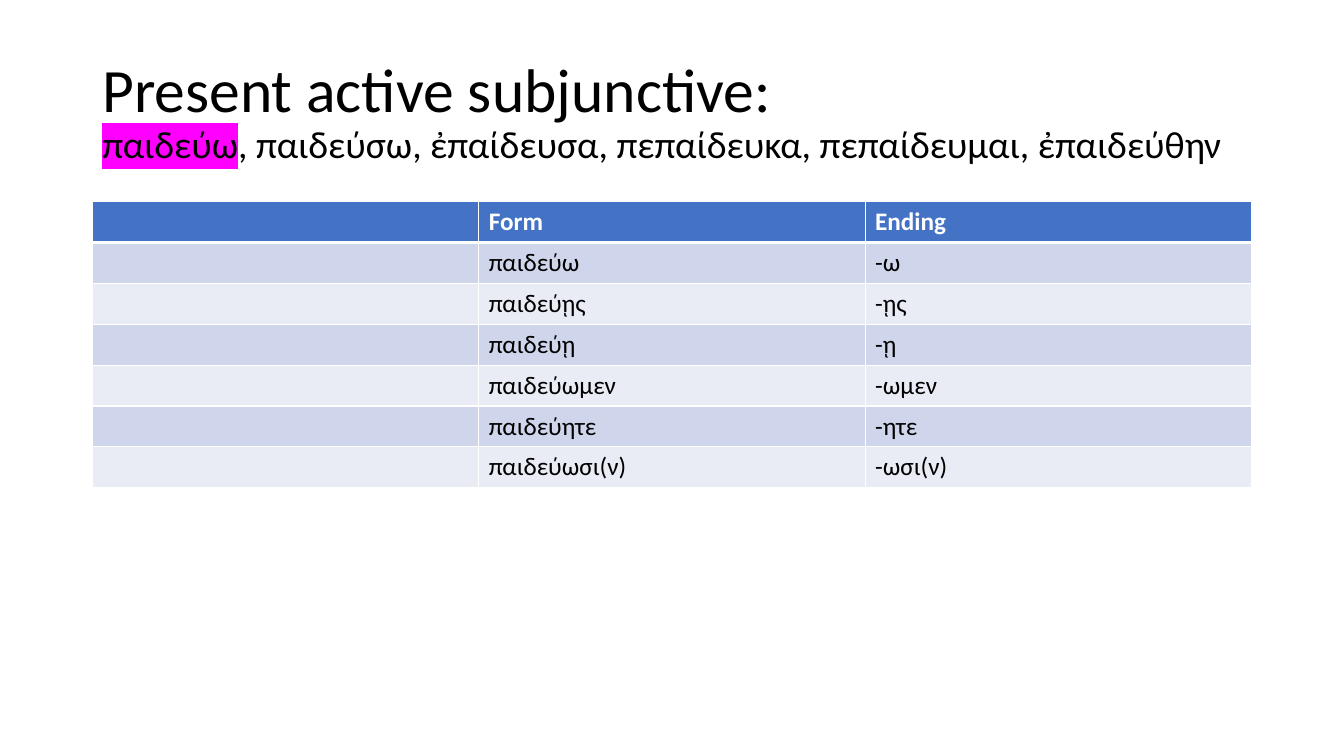
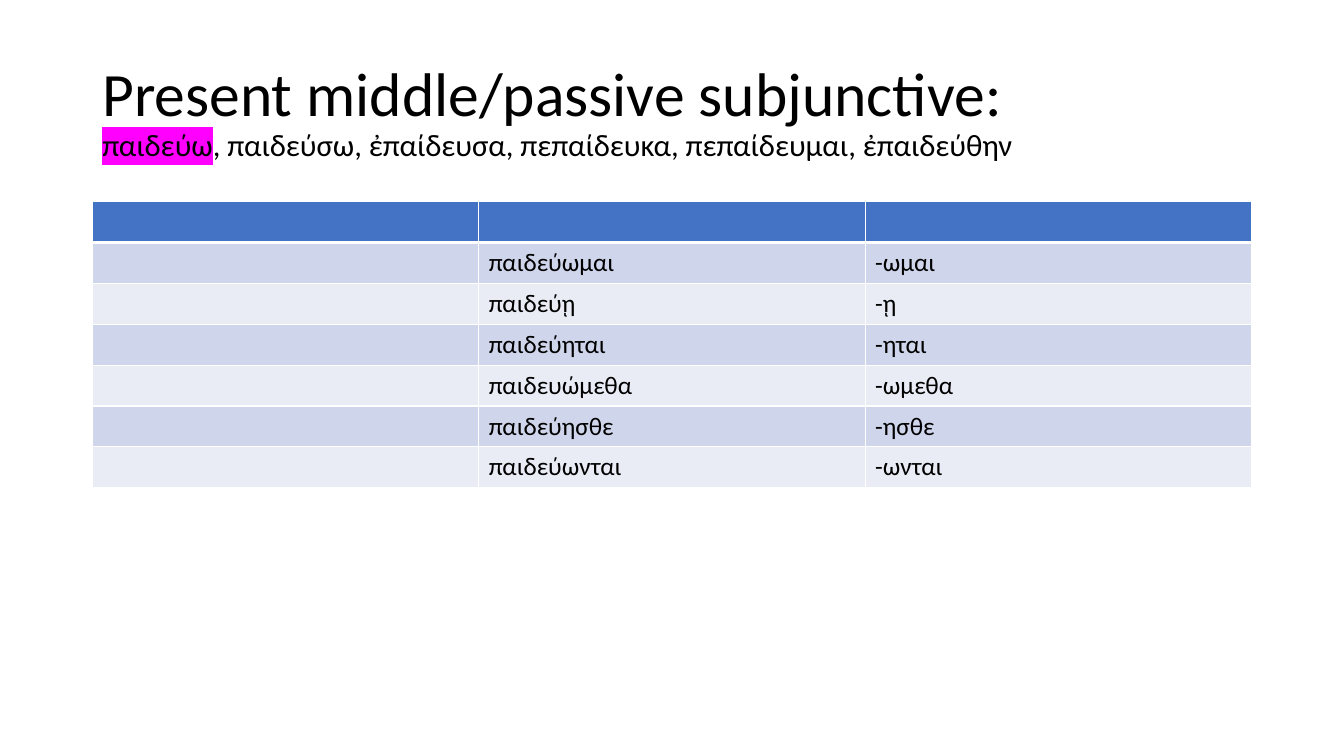
"""Build two slides of Greek present subjunctive forms."""
from dataclasses import dataclass

from lxml import etree
from pptx import Presentation
from pptx.dml.color import RGBColor
from pptx.enum.text import MSO_ANCHOR
from pptx.oxml.ns import qn
from pptx.util import Pt

MIDDLE = MSO_ANCHOR.MIDDLE


@dataclass(frozen=True)
class Theme:
    font: str = "Calibri"
    ink: str = "000000"
    white: str = "FFFFFF"
    head: str = "4472C4"
    bands: tuple = ("E9EBF5", "CFD5EA")
    mark: str = "FF00FF"
    title: int = 44
    body: int = 18
    thin: int = 1
    thick: int = 3


THEME = Theme()
LEFT, WIDTH = 66, 828
TOP, ROW = 144, 29.2
VERB = "παιδεύω"
PARTS = ", παιδεύσω, ἐπαίδευσα, πεπαίδευκα, πεπαίδευμαι, ἐπαιδεύθην"
SLIDES = [
    ("Present active subjunctive:", 27, [
        ("", "Form", "Ending"),
        ("", "παιδεύω", "-ω"),
        ("", "παιδεύῃς", "-ῃς"),
        ("", "παιδεύῃ", "-ῃ"),
        ("", "παιδεύωμεν", "-ωμεν"),
        ("", "παιδεύητε", "-ητε"),
        ("", "παιδεύωσι(ν)", "-ωσι(ν)"),
    ]),
    ("Present middle/passive subjunctive:", 22, [
        ("", "", ""),
        ("", "παιδεύωμαι", "-ωμαι"),
        ("", "παιδεύῃ", "-ῃ"),
        ("", "παιδεύηται", "-ηται"),
        ("", "παιδευώμεθα", "-ωμεθα"),
        ("", "παιδεύησθε", "-ησθε"),
        ("", "παιδεύωνται", "-ωνται"),
    ]),
]


def write(para, text, size=THEME.body, color=THEME.ink, bold=False, mark=None):
    run = para.add_run()
    run.text = text
    font = run.font
    font.name, font.size, font.bold = THEME.font, Pt(size), bold
    font.color.rgb = RGBColor.from_string(color)
    if mark:
        light = etree.Element(qn("a:highlight"))
        etree.SubElement(light, qn("a:srgbClr"), val=mark)
        run._r.get_or_add_rPr().find(qn("a:solidFill")).addnext(light)


def edge(cell, widths):
    props = cell._tc.get_or_add_tcPr()
    for spot, (side, width) in enumerate(widths.items()):
        line = etree.Element(qn(f"a:ln{side}"), w=str(Pt(width)))
        fill = etree.SubElement(line, qn("a:solidFill"))
        etree.SubElement(fill, qn("a:srgbClr"), val=THEME.white)
        props.insert(spot, line)


deck = Presentation()
deck.slide_width, deck.slide_height = Pt(960), Pt(540)
blank = deck.slide_layouts[6]

for title, size, rows in SLIDES:
    slide = deck.slides.add_slide(blank)
    box = slide.shapes.add_textbox(Pt(LEFT), Pt(28.75), Pt(WIDTH), Pt(104.4))
    frame = box.text_frame
    frame.word_wrap = True
    frame.vertical_anchor = MIDDLE
    para = frame.paragraphs[0]
    para.line_spacing = 0.9
    write(para, title, size=THEME.title)
    para.add_line_break()
    write(para, VERB, size=size, mark=THEME.mark)
    write(para, PARTS, size=size)

    count = len(rows)
    table = slide.shapes.add_table(
        count, len(rows[0]), Pt(LEFT), Pt(TOP), Pt(WIDTH), Pt(ROW * count)
    ).table
    for r, row in enumerate(rows):
        top = THEME.thick if r == 1 else THEME.thin
        low = THEME.thick if r == 0 else THEME.thin
        for c, text in enumerate(row):
            cell = table.cell(r, c)
            cell.fill.solid()
            shade = THEME.bands[r % 2] if r else THEME.head
            cell.fill.fore_color.rgb = RGBColor.from_string(shade)
            edge(cell, {"L": THEME.thin, "R": THEME.thin, "T": top, "B": low})
            if text:
                write(cell.text_frame.paragraphs[0], text, bold=r == 0,
                      color=THEME.ink if r else THEME.white)

deck.save("out.pptx")
